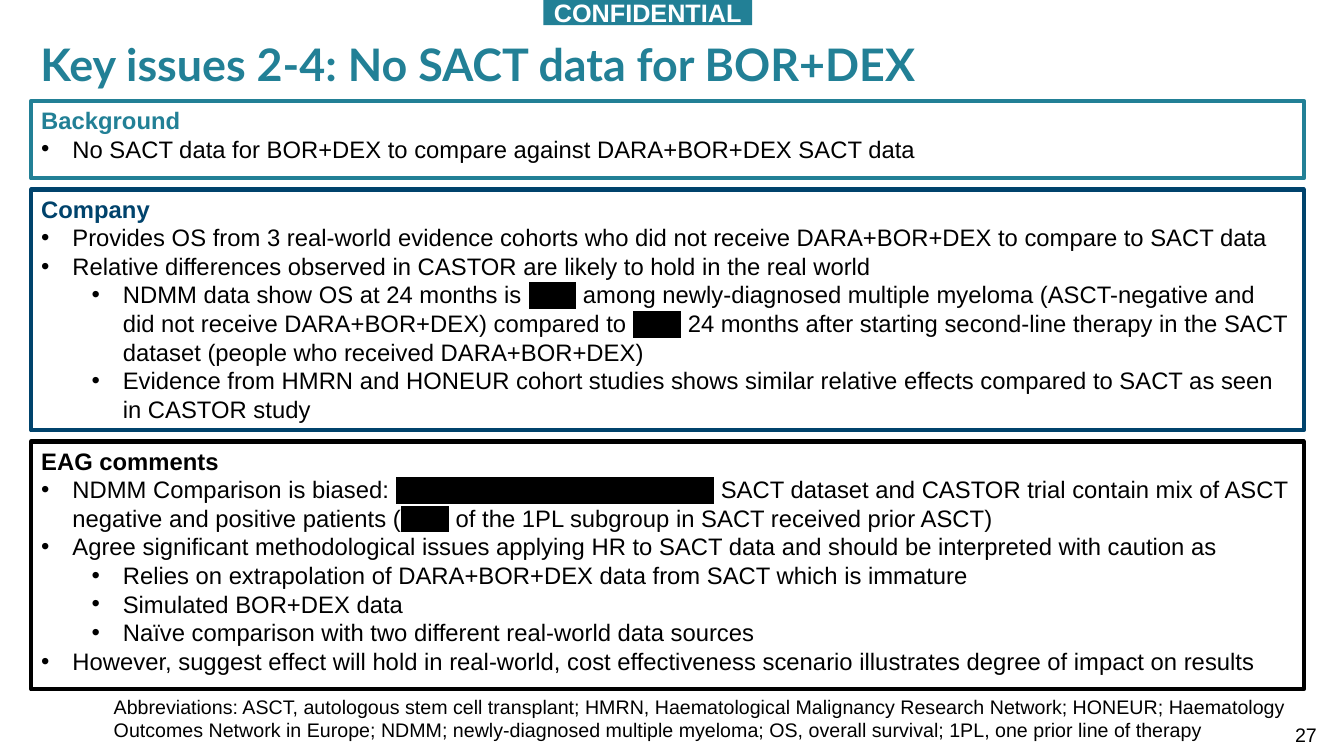
"""Build the key issues slide: title, three stacked bordered panels, marking and footer."""
import pptx
import pptx.dml.color
import pptx.enum.shapes
import pptx.enum.text
import pptx.oxml.ns
import pptx.util
from lxml import etree

COLORS = {"teal": "228096", "navy": "00436C", "black": "000000", "white": "FFFFFF"}
TITLE = "Key issues 2-4: No SACT data for BOR+DEX"
MARKING = "CONFIDENTIAL"
PAGE_NUMBER = "27"
ABBREVIATIONS = (
    "Abbreviations: ASCT, autologous stem cell transplant; HMRN, Haematological Malignancy "
    "Research Network; HONEUR; Haematology Outcomes Network in Europe; NDMM; newly-diagnosed "
    "multiple myeloma; OS, overall survival; 1PL, one prior line of therapy"
)
# Text between bars is redacted.
PANELS = [
    {"heading": "Background", "color": "teal", "height": 0.77, "bullets": [
        (0, "No SACT data for BOR+DEX to compare against DARA+BOR+DEX SACT data"),
    ]},
    {"heading": "Company", "color": "navy", "height": 2.39, "bullets": [
        (0, "Provides OS from 3 real-world evidence cohorts who did not receive DARA+BOR+DEX "
            "to compare to SACT data"),
        (0, "Relative differences observed in CASTOR are likely to hold in the real world"),
        (1, "NDMM data show OS at 24 months is |XXX| among newly-diagnosed multiple myeloma "
            "(ASCT-negative and did not receive DARA+BOR+DEX) compared to |XXX| 24 months after "
            "starting second-line therapy in the SACT dataset (people who received DARA+BOR+DEX)"),
        (1, "Evidence from HMRN and HONEUR cohort studies shows similar relative effects "
            "compared to SACT as seen in CASTOR study"),
    ]},
    {"heading": "EAG comments", "color": "black", "height": 2.46, "bullets": [
        (0, "NDMM Comparison is biased: |XXXXXXXXXXXXXXXXXXXX| SACT dataset and CASTOR trial "
            "contain mix of ASCT negative and positive patients (|XXX| of the 1PL subgroup in "
            "SACT received prior ASCT)"),
        (0, "Agree significant methodological issues applying HR to SACT data and should be "
            "interpreted with caution as"),
        (1, "Relies on extrapolation of DARA+BOR+DEX data from SACT which is immature"),
        (1, "Simulated BOR+DEX data"),
        (1, "Naïve comparison with two different real-world data sources"),
        (0, "However, suggest effect will hold in real-world, cost effectiveness scenario "
            "illustrates degree of impact on results"),
    ]},
]

SLIDE_WIDTH, SLIDE_HEIGHT = 13.33, 7.5
PANEL_LEFT, PANEL_TOP, PANEL_WIDTH, PANEL_GAP = 0.31, 1, 12.62, 0.11
INDENT, LEVEL_STEP = 0.31, 0.5
BODY = {"name": "Arial", "size": pptx.util.Pt(17), "bold": False}
HEADING = {**BODY, "bold": True}
SMALL = {**BODY, "size": pptx.util.Pt(14)}
MARK = {**HEADING, "size": pptx.util.Pt(18)}
TITLE_FONT = {"name": "Lato", "size": pptx.util.Pt(32), "bold": True}
ALIGN = pptx.enum.text.PP_ALIGN
ANCHOR = pptx.enum.text.MSO_ANCHOR


def rgb(color):
    return pptx.dml.color.RGBColor.from_string(COLORS[color])


def inches(*lengths):
    return [pptx.util.Inches(length) for length in lengths]


def add_text(paragraph, text, style, color):
    for position, part in enumerate(text.split("|")):
        run = paragraph.add_run()
        run.text = part
        for name, value in style.items():
            setattr(run.font, name, value)
        run.font.color.rgb = rgb(color)
        if position % 2:
            highlight = etree.Element(pptx.oxml.ns.qn("a:highlight"))
            etree.SubElement(highlight, pptx.oxml.ns.qn("a:srgbClr"), val=COLORS["black"])
            run.font.fill._xPr.find(pptx.oxml.ns.qn("a:solidFill")).addnext(highlight)


def add_bullet(paragraph, level):
    paragraph.level = level
    properties = paragraph._p.get_or_add_pPr()
    properties.set("marL", str(pptx.util.Inches(INDENT + level * LEVEL_STEP)))
    properties.set("indent", str(-pptx.util.Inches(INDENT)))
    etree.SubElement(properties, pptx.oxml.ns.qn("a:buFont"), typeface="Arial")
    etree.SubElement(properties, pptx.oxml.ns.qn("a:buChar"), char="•")


def set_frame(shape, anchor=ANCHOR.TOP, align=ALIGN.LEFT):
    frame = shape.text_frame
    frame.word_wrap = True
    frame.vertical_anchor = anchor
    frame.paragraphs[0].alignment = align
    return frame


def add_rectangle(slide, box):
    shape = slide.shapes.add_shape(pptx.enum.shapes.MSO_SHAPE.RECTANGLE, *inches(*box))
    shape.shadow.inherit = False
    return shape


def add_panel(slide, panel, top):
    shape = add_rectangle(slide, (PANEL_LEFT, top, PANEL_WIDTH, panel["height"]))
    shape.fill.background()
    shape.line.color.rgb = rgb(panel["color"])
    shape.line.width = pptx.util.Pt(3)
    frame = set_frame(shape)
    add_text(frame.paragraphs[0], panel["heading"], HEADING, panel["color"])
    for level, text in panel["bullets"]:
        paragraph = frame.add_paragraph()
        paragraph.alignment = ALIGN.LEFT
        add_bullet(paragraph, level)
        add_text(paragraph, text, BODY, "black")


def add_title(slide):
    title = slide.shapes.title
    title.left, title.top, title.width, title.height = inches(0.3, 0.37, 12.92, 0.58)
    frame = set_frame(title)
    frame.auto_size = pptx.enum.text.MSO_AUTO_SIZE.NONE
    frame.paragraphs[0].line_spacing = 0.9
    add_text(frame.paragraphs[0], TITLE, TITLE_FONT, "teal")


def add_marking(slide):
    shape = add_rectangle(slide, (5.39, 0, 2.07, 0.25))
    shape.fill.solid()
    shape.fill.fore_color.rgb = rgb("teal")
    shape.line.fill.background()
    frame = set_frame(shape, ANCHOR.MIDDLE, ALIGN.CENTER)
    add_text(frame.paragraphs[0], MARKING, MARK, "white")


def add_note(slide, text, box, align):
    frame = set_frame(slide.shapes.add_textbox(*inches(*box)), align=align)
    add_text(frame.paragraphs[0], text, SMALL, "black")


def main():
    presentation = pptx.Presentation()
    presentation.slide_width, presentation.slide_height = inches(SLIDE_WIDTH, SLIDE_HEIGHT)
    slide = presentation.slides.add_slide(presentation.slide_layouts.get_by_name("Title Only"))
    add_title(slide)
    top = PANEL_TOP
    for panel in PANELS:
        add_panel(slide, panel, top)
        top += panel["height"] + PANEL_GAP
    add_marking(slide)
    add_note(slide, ABBREVIATIONS, (1.03, 6.84, 12.13, 0.57), ALIGN.LEFT)
    add_note(slide, PAGE_NUMBER, (12.65, 7.12, 0.51, 0.4), ALIGN.RIGHT)
    presentation.save("out.pptx")


if __name__ == "__main__":
    main()
